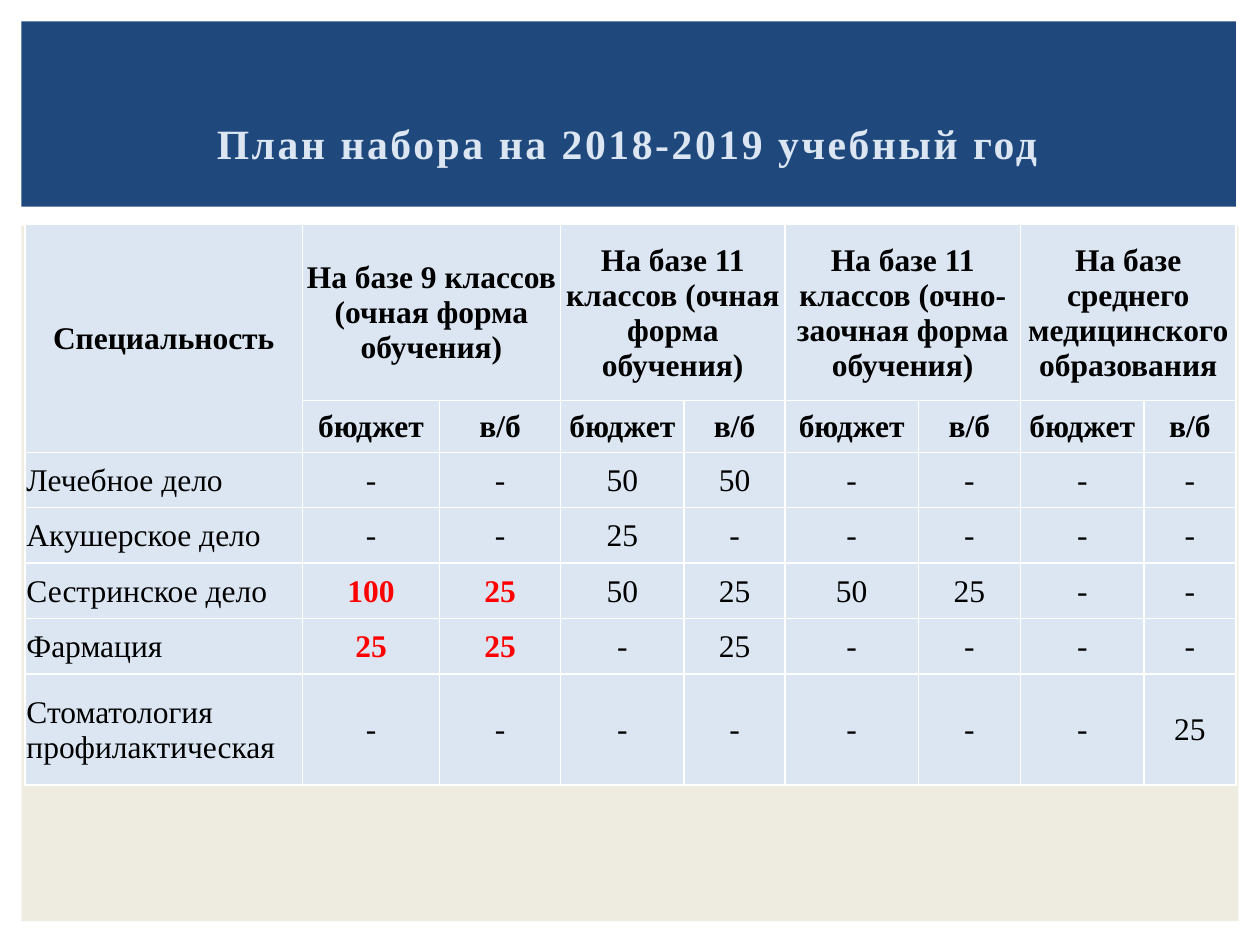
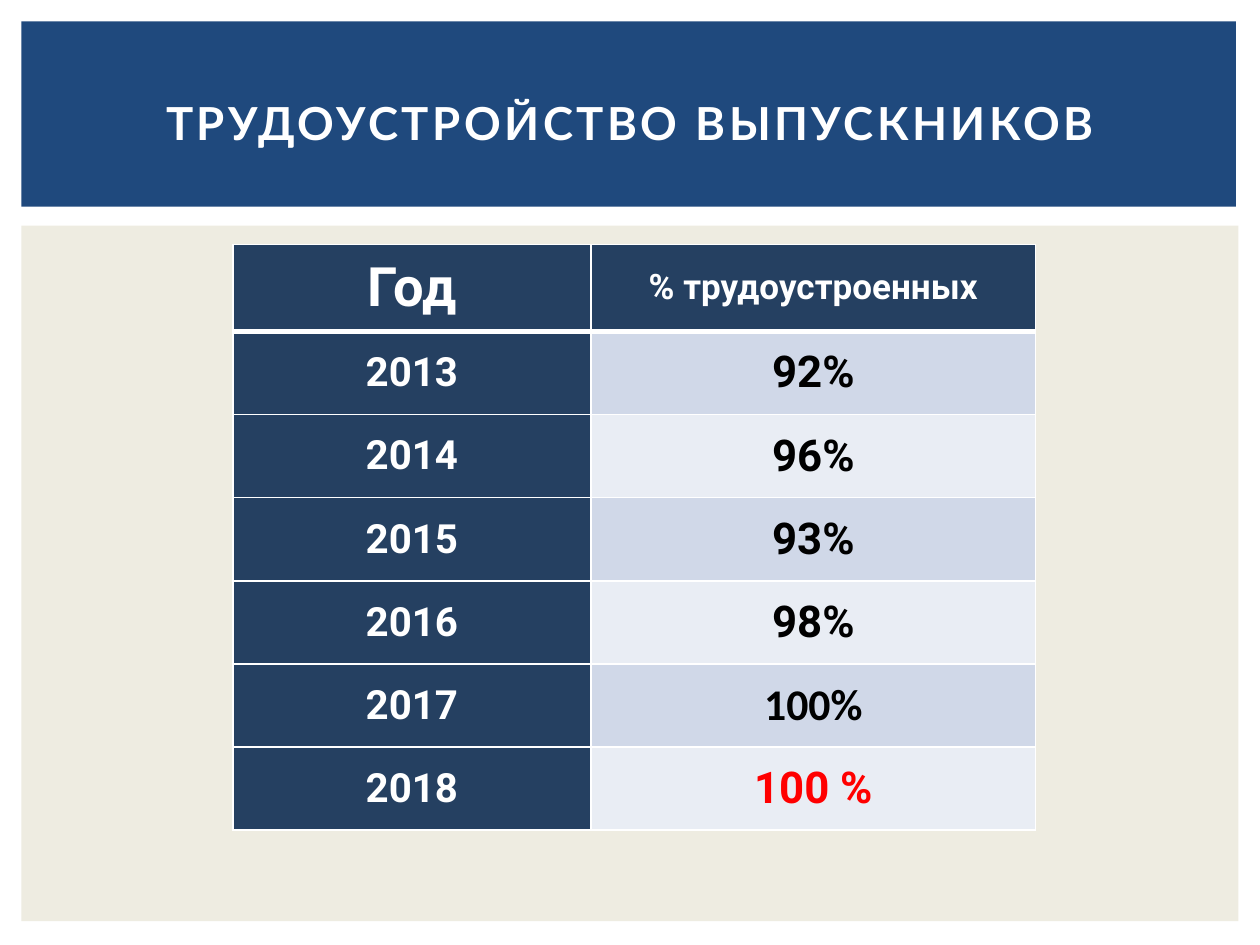
from dataclasses import dataclass
from lxml.etree import SubElement
from pptx import Presentation
from pptx.dml.color import RGBColor
from pptx.enum.shapes import MSO_SHAPE
from pptx.enum.text import MSO_ANCHOR, MSO_AUTO_SIZE, PP_ALIGN
from pptx.oxml.ns import qn
from pptx.util import Inches, Pt


@dataclass(frozen=True)
class Theme:
    # Colours
    band: str = "1F497D"
    panel: str = "EEECE1"
    pale: str = "DCE6F2"
    navy: str = "254061"
    odd: str = "D0D8E8"
    even: str = "E9EDF4"
    white: str = "FFFFFF"
    black: str = "000000"
    red: str = "FF0000"
    # Fonts
    serif: str = "Times New Roman"
    sans: str = "Roboto"
    head: str = "Lato"
    plain: str = "Calibri"
    # Type sizes
    plan: float = 18
    intake: float = 23.8
    title: float = 26
    year: float = 23
    share: float = 25
    label: float = 20
    large: float = 31


def put(frame, text, *, font, size, color, bold=False, align=PP_ALIGN.CENTER, track=0):
    """Write one formatted paragraph into a text frame."""
    para = frame.paragraphs[0]
    para.alignment = align
    run = para.add_run()
    run.text = text
    run.font.name = font
    run.font.size = Pt(size)
    run.font.bold = bold
    run.font.color.rgb = RGBColor.from_string(color)
    if track:
        run._r.get_or_add_rPr().set("spc", str(round(track * 100)))


def inset(item, left, top, right, base):
    item.margin_left, item.margin_top = Inches(left), Inches(top)
    item.margin_right, item.margin_bottom = Inches(right), Inches(base)
    item.vertical_anchor = MSO_ANCHOR.MIDDLE


class Deck:
    def __init__(self, theme):
        self.theme = theme
        self.show = Presentation()
        self.show.slide_width, self.show.slide_height = Inches(10), Inches(7.5)
        self.slide = None

    def page(self):
        """Start a slide with its panel and title band."""
        self.slide = self.show.slides.add_slide(self.show.slide_layouts[5])
        self.rect(0.17, 1.79, 9.66, 5.52, self.theme.panel)
        self.rect(0.17, 0.17, 9.64, 1.47, self.theme.band)

    def rect(self, left, top, width, height, fill):
        box = self.slide.shapes.add_shape(
            MSO_SHAPE.RECTANGLE, Inches(left), Inches(top), Inches(width), Inches(height))
        box.shadow.inherit = False
        box.fill.solid()
        box.fill.fore_color.rgb = RGBColor.from_string(fill)
        box.line.fill.background()

    def title(self, text, left, top, width, height, pad=(0, 0, 0, 0), **form):
        box = self.slide.shapes.title
        box.left, box.top = Inches(left), Inches(top)
        box.width, box.height = Inches(width), Inches(height)
        box.element.getparent().append(box.element)  # bring above the band
        frame = box.text_frame
        frame.word_wrap = True
        frame.auto_size = MSO_AUTO_SIZE.NONE
        inset(frame, *pad)
        put(frame, text, bold=True, **form)

    def table(self, left, top, cols, rows):
        frame = self.slide.shapes.add_table(
            len(rows), len(cols), Inches(left), Inches(top),
            Inches(sum(cols)), Inches(sum(rows)))
        grid = frame.table
        grid.first_row = grid.horz_banding = False
        for col, width in zip(grid.columns, cols):
            col.width = Inches(width)
        for row, height in zip(grid.rows, rows):
            row.height = Inches(height)
        return grid

    def cell(self, cell, text, fill, pad, top=1, base=1, **form):
        inset(cell, *pad)
        cell.fill.solid()
        cell.fill.fore_color.rgb = RGBColor.from_string(fill)
        self.edge(cell, L=1, R=1, T=top, B=base)
        if text:
            put(cell.text_frame, text, **form)

    def edge(self, cell, **sides):
        props = cell._tc.get_or_add_tcPr()
        for spot, (side, width) in enumerate(sides.items()):
            line = SubElement(props, qn(f"a:ln{side}"), w=str(Pt(width)))
            paint = SubElement(line, qn("a:solidFill"))
            SubElement(paint, qn("a:srgbClr"), val=self.theme.white)
            props.insert(spot, line)  # borders come before the fill


def intake(deck):
    """Admission plan by specialty."""
    theme = deck.theme
    deck.page()
    deck.title("План набора на 2018-2019 учебный год", 1.22, 0.68, 7.14, 0.83,
               pad=(0.38, 0.08, 0, 0), font=theme.serif, size=theme.intake,
               color=theme.pale, track=1.5)

    bases = ["На базе 9 классов (очная форма обучения)",
             "На базе 11 классов (очная форма обучения)",
             "На базе 11 классов (очно-заочная форма обучения)",
             "На базе среднего медицинского образования"]
    places = {"Лечебное дело": "- - 50 50 - - - -",
              "Акушерское дело": "- - 25 - - - - -",
              "Сестринское дело": "100 25 50 25 50 25 - -",
              "Фармация": "25 25 - 25 - - - -",
              "Стоматология профилактическая": "- - - - - - - 25"}
    heads = [text for base in bases for text in (base, "")]
    data = [["Специальность", *heads], ["", *["бюджет", "в/б"] * len(bases)]]
    data += [[name, *line.split()] for name, line in places.items()]

    grid = deck.table(0.2, 1.78, [2.2, 1.09, 0.96, 0.98, 0.8, 1.06, 0.81, 0.98, 0.73],
                      [1.4, 0.41, *[0.44] * 4, 0.88])
    grid.cell(0, 0).merge(grid.cell(1, 0))
    for col in range(1, 9, 2):
        grid.cell(0, col).merge(grid.cell(0, col + 1))
    for row, line in enumerate(data):
        for col, text in enumerate(line):
            head = row < 2
            # Places after nine classes stand out
            key = not head and col in (1, 2) and text != "-"
            name = not head and col == 0
            deck.cell(grid.cell(row, col), text, theme.pale, (0.01, 0.01, 0.01, 0),
                      font=theme.serif, size=theme.plan, bold=head or key,
                      color=theme.red if key else theme.black,
                      align=PP_ALIGN.LEFT if name else PP_ALIGN.CENTER)


def jobs(deck):
    """Share of graduates in work by year."""
    theme = deck.theme
    deck.page()
    deck.title("ТРУДОУСТРОЙСТВО ВЫПУСКНИКОВ", 0.42, 0.75, 9.17, 0.44,
               font=theme.head, size=theme.title, color=theme.white, track=2)

    shares = ["92%", "96%", "93%", "98%", "100%", "100 %"]
    grid = deck.table(1.85, 1.94, [2.84, 3.53], [0.69, *[0.66] * len(shares)])
    pad = (0.05, 0.04, 0.05, 0.04)

    # Header row
    heads = [("Год", theme.large), ("% трудоустроенных", theme.label)]
    for col, (text, size) in enumerate(heads):
        deck.cell(grid.cell(0, col), text, theme.navy, pad, base=3,
                  font=theme.sans, size=size, color=theme.white, bold=True)

    # One row a year
    for row, share in enumerate(shares, 1):
        top = 3 if row == 1 else 1
        year = 2012 + row
        deck.cell(grid.cell(row, 0), str(year), theme.navy, pad, top=top,
                  font=theme.sans, size=theme.year, color=theme.white, bold=True)
        deck.cell(grid.cell(row, 1), share, theme.odd if row % 2 else theme.even, pad,
                  top=top, font=theme.plain if year == 2017 else theme.sans,
                  size=theme.share, bold=True,
                  color=theme.red if year == 2018 else theme.black)


def main():
    deck = Deck(Theme())
    intake(deck)
    jobs(deck)
    deck.show.save("out.pptx")


if __name__ == "__main__":
    main()
